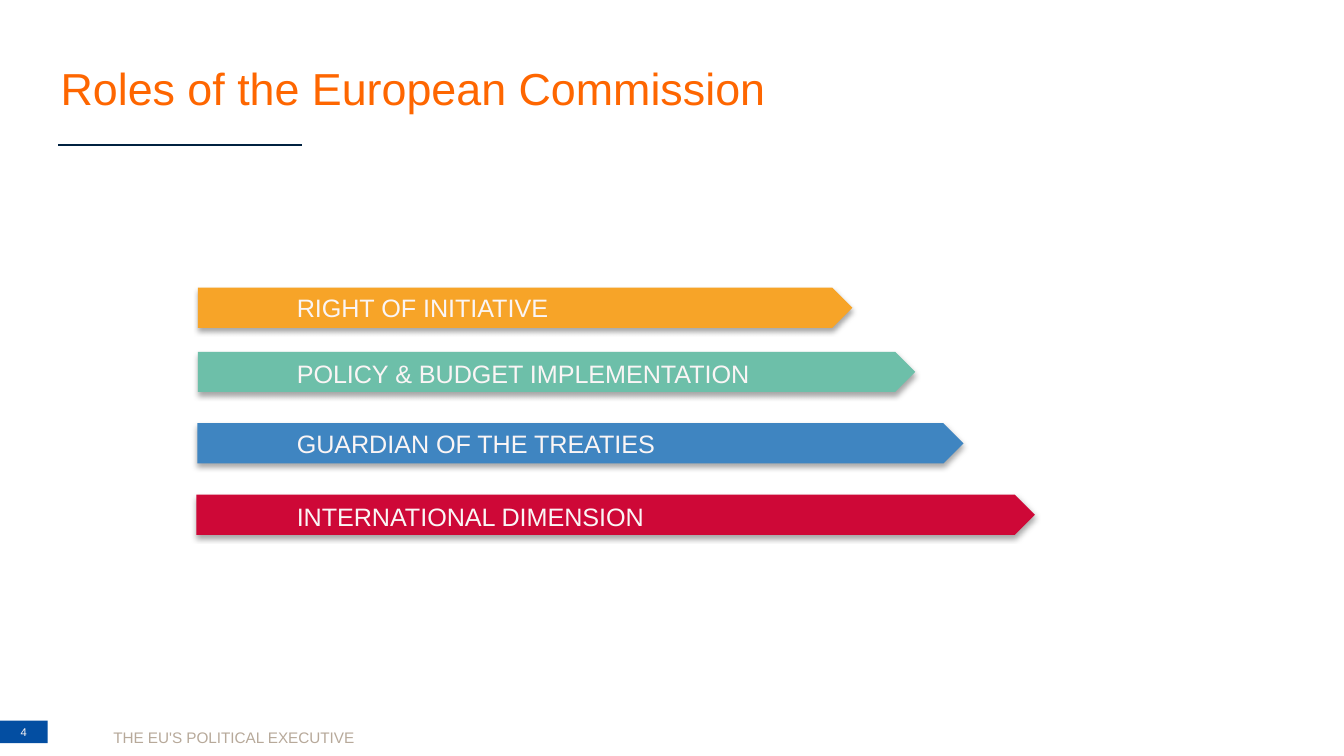
from dataclasses import dataclass

from lxml.etree import SubElement
from pptx import Presentation
from pptx.dml.color import RGBColor as RGB
from pptx.enum.shapes import MSO_CONNECTOR, MSO_SHAPE
from pptx.enum.text import MSO_ANCHOR as Anchor, MSO_AUTO_SIZE as AutoSize, PP_ALIGN as Align
from pptx.oxml.ns import qn
from pptx.util import Cm, Pt


@dataclass(frozen=True)
class Theme:
    font: str = "Arial"
    title: str = "FE6600"
    rule: str = "002140"
    light: str = "FAF5F5"
    footer: str = "B7A99A"
    badge: str = "034EA2"
    title_size: float = 24
    label_size: float = 13.5
    footer_size: float = 8.2
    badge_size: float = 6


@dataclass(frozen=True)
class Role:
    text: str
    color: str
    left: float
    top: float
    width: float
    label_top: float


THEME = Theme()
BAR_HEIGHT = 0.76
LABEL_LEFT, LABEL_WIDTH, LABEL_HEIGHT = 5.36, 12.1, 0.84
ROLES = [
    Role("RIGHT OF INITIATIVE", "F7A428", 3.74, 5.44, 12.37, 5.41),
    Role("POLICY & BUDGET IMPLEMENTATION", "6DBFA9", 3.74, 6.65, 13.56, 6.65),
    Role("GUARDIAN OF THE TREATIES", "3F85C1", 3.73, 8.0, 14.48, 7.98),
    Role("INTERNATIONAL DIMENSION", "CE0837", 3.71, 9.35, 15.85, 9.35),
]


def write(sp, text: str, size: float, color: str, align=Align.LEFT,
          anchor=Anchor.TOP, wrap: bool = True):
    """Fill a shape with one formatted paragraph and return the paragraph."""
    tf = sp.text_frame
    tf.auto_size = AutoSize.NONE
    tf.word_wrap = wrap
    tf.vertical_anchor = anchor
    p = tf.paragraphs[0]
    p.text = text
    p.alignment = align
    p.font.name = THEME.font
    p.font.size = Pt(size)
    p.font.color.rgb = RGB.from_string(color)
    return p


def add_block(s, kind, left: float, top: float, width: float, height: float, color: str):
    """Add a flat, borderless preset shape."""
    sp = s.shapes.add_shape(kind, Cm(left), Cm(top), Cm(width), Cm(height))
    sp.fill.solid()
    sp.fill.fore_color.rgb = RGB.from_string(color)
    sp.line.fill.background()
    sp.shadow.inherit = False
    return sp


def add_shadow(sp) -> None:
    """Give a shape a soft shadow falling straight down."""
    effects = sp._element.spPr.find(qn("a:effectLst"))
    shadow = SubElement(effects, qn("a:outerShdw"), blurRad=str(Pt(3.1)),
                        dist=str(Pt(1.8)), dir="5400000", rotWithShape="0")
    black = SubElement(shadow, qn("a:srgbClr"), val="000000")
    SubElement(black, qn("a:alpha"), val="35000")


def add_role(s, role: Role) -> None:
    """Draw one arrow bar and its label."""
    bar = add_block(s, MSO_SHAPE.PENTAGON, role.left, role.top, role.width,
                    BAR_HEIGHT, role.color)
    add_shadow(bar)
    label = s.shapes.add_textbox(Cm(LABEL_LEFT), Cm(role.label_top),
                                 Cm(LABEL_WIDTH), Cm(LABEL_HEIGHT))
    write(label, role.text, THEME.label_size, THEME.light)


def add_rule(s) -> None:
    """Draw the thin line under the title."""
    y = Cm(2.74)
    line = s.shapes.add_connector(MSO_CONNECTOR.STRAIGHT, Cm(1.1), y, Cm(5.7), y)
    line.line.color.rgb = RGB.from_string(THEME.rule)
    line.line.width = Pt(0.75)
    SubElement(line._element.spPr, qn("a:effectLst"))


def add_footer(s) -> None:
    """Add the footer text and the page number badge."""
    box = s.shapes.add_textbox(Cm(1.83), Cm(13.46), Cm(5.18), Cm(0.71))
    p = write(box, "THE EU'S POLITICAL EXECUTIVE", THEME.footer_size, THEME.footer,
              Align.CENTER, wrap=False)
    p.line_spacing = 1.5
    badge = add_block(s, MSO_SHAPE.RECTANGLE, 0, 13.62, 0.9, 0.43, THEME.badge)
    tf = badge.text_frame
    tf.margin_left = tf.margin_right = Cm(0.18)
    tf.margin_top = tf.margin_bottom = Cm(0.1)
    write(badge, "4", THEME.badge_size, THEME.light, Align.CENTER, Anchor.MIDDLE)


def main() -> None:
    prs = Presentation()
    prs.slide_width, prs.slide_height = Cm(25.4), Cm(14.29)
    s = prs.slides.add_slide(prs.slide_layouts[5])

    # Title
    title = s.shapes.title
    title.left, title.top, title.width, title.height = Cm(0.89), Cm(1.02), Cm(20.73), Cm(1.88)
    write(title, "Roles of the European Commission", THEME.title_size, THEME.title)

    # Frame
    add_rule(s)
    add_footer(s)

    # Arrow bars
    for role in ROLES:
        add_role(s, role)

    prs.save("out.pptx")


if __name__ == "__main__":
    main()
